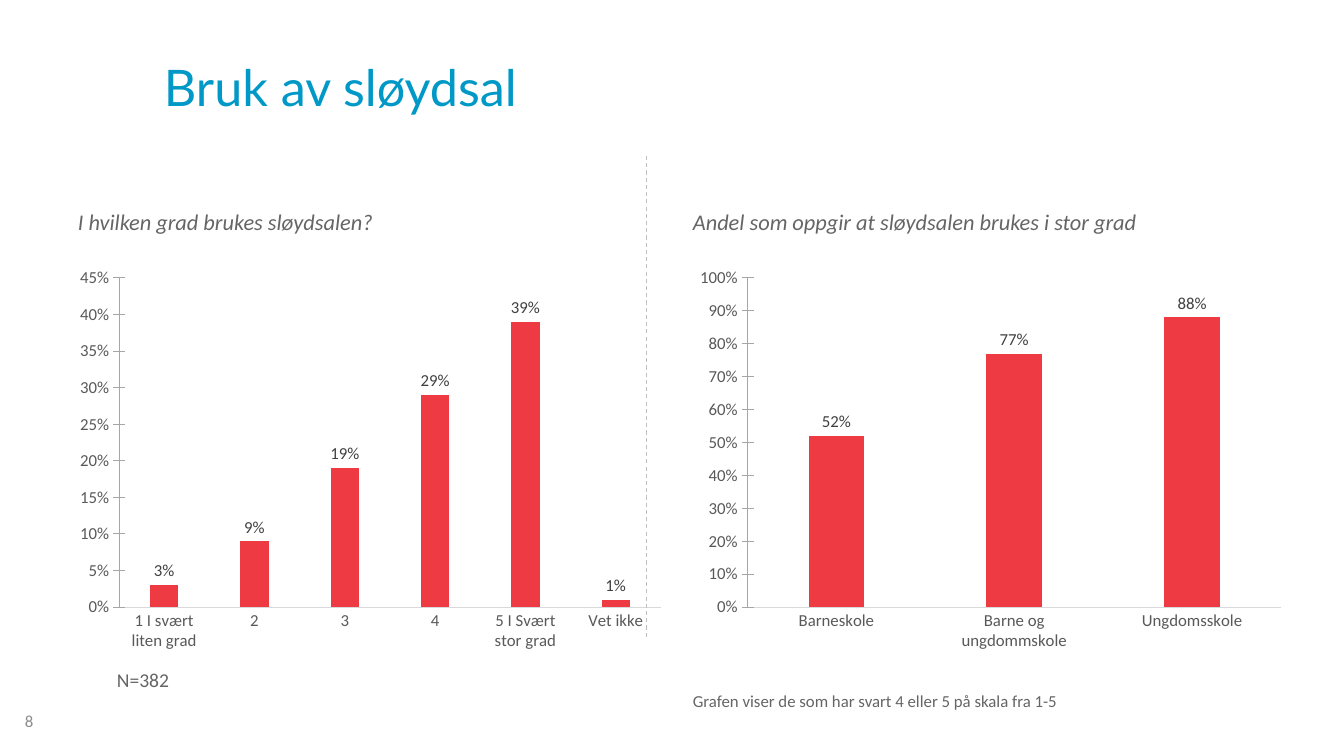
from lxml import etree
from pptx import Presentation
from pptx.chart.data import CategoryChartData as Data
from pptx.dml.color import RGBColor as RGB
from pptx.enum.chart import XL_CHART_TYPE as Kind, XL_LABEL_POSITION as Spot
from pptx.enum.chart import XL_TICK_MARK as Tick
from pptx.enum.dml import MSO_LINE as Dash
from pptx.enum.shapes import MSO_CONNECTOR as Link
from pptx.enum.text import MSO_ANCHOR as Anchor
from pptx.oxml.ns import qn
from pptx.util import Emu, Pt

HEX = {
    "title": "0098C6", "text": "656567", "page": "8C8C8C", "bar": "EE3A43",
    "label": "404040", "tick": "595959", "base": "D9D9D9", "axis": "A6A6A6",
    "split": "BFBFBF",
}
SCALE = 914400 / 100.8


def px(num):
    return Emu(round(num * SCALE))


def tint(name):
    return RGB.from_string(HEX[name])


def style(font, size, color, face="Calibri"):
    font.name = face
    font.size = Pt(size)
    font.color.rgb = tint(color)


def stroke(line, color):
    line.color.rgb = tint(color)
    line.width = Pt(0.75)


def add_text(slide, box, words, size, color="text", face="Calibri",
             anchor=Anchor.MIDDLE, slant=False):
    frame = slide.shapes.add_textbox(*map(px, box)).text_frame
    frame.word_wrap = True
    frame.vertical_anchor = anchor
    run = frame.paragraphs[0].add_run()
    run.text = words
    style(run.font, size, color, face)
    run.font.italic = slant


def add_split(slide, left, top, end):
    line = slide.shapes.add_connector(Link.STRAIGHT, *map(px, (left, top, left, end)))
    stroke(line.line, "split")
    line.line.dash_style = Dash.DASH
    etree.SubElement(line._element.spPr, qn("a:effectLst"))


def add_bars(slide, box, shares, top, step):
    data = Data(number_format="0%")
    data.categories = list(shares)
    data.add_series("Series 1", list(shares.values()))
    chart = slide.shapes.add_chart(Kind.COLUMN_CLUSTERED, *map(px, box), data).chart
    chart.has_legend = False
    chart.has_title = False
    chart.font.name = "Calibri"
    chart.font.size = Pt(10)

    # Bars and their labels
    plot = chart.plots[0]
    plot.gap_width = 219
    plot.overlap = -27
    plot.vary_by_categories = False
    fill = plot.series[0].format.fill
    fill.solid()
    fill.fore_color.rgb = tint("bar")
    plot.has_data_labels = True
    labels = plot.data_labels
    labels.show_value = True
    labels.position = Spot.OUTSIDE_END
    labels.number_format = "0%"
    labels.number_format_is_linked = False
    style(labels.font, 12, "label")

    # Axes
    for axis, mark, color in ((chart.category_axis, Tick.NONE, "base"),
                              (chart.value_axis, Tick.CROSS, "axis")):
        axis.has_major_gridlines = False
        axis.major_tick_mark = mark
        axis.minor_tick_mark = Tick.NONE
        style(axis.tick_labels.font, 12, "tick")
        stroke(axis.format.line, color)
    scale = chart.value_axis
    scale.minimum_scale = 0
    scale.maximum_scale = top
    scale.major_unit = step
    scale.tick_labels.number_format = "0%"
    scale.tick_labels.number_format_is_linked = False


def main():
    deck = Presentation()
    deck.slide_width, deck.slide_height = px(1344), px(756)
    slide = deck.slides.add_slide(deck.slide_layouts[6])

    # Title and page number
    add_text(slide, (154, 23, 1139, 126), "Bruk av sløydsal", 36, "title", "Lato")
    add_text(slide, (15, 701, 313, 40), "8", 12, "page")

    # Left half: degree of use
    add_text(slide, (68, 169, 594, 71), "I hvilken grad brukes sløydsalen?", 16,
             anchor=Anchor.BOTTOM, slant=True)
    use = {"1 I svært liten grad": 0.03, "2": 0.09, "3": 0.19, "4": 0.29,
           "5 I Svært stor grad": 0.39, "Vet ikke": 0.01}
    add_bars(slide, (68, 260, 605, 399), use, 0.45, 0.05)
    add_text(slide, (107, 660, 95, 40), "N=382", 14)

    # Dashed divider
    add_split(slide, 647, 156, 637)

    # Right half: share by type of school
    add_text(slide, (683, 169, 594, 71),
             "Andel som oppgir at sløydsalen brukes i stor grad", 16,
             anchor=Anchor.BOTTOM, slant=True)
    schools = {"Barneskole": 0.52, "Barne og ungdommskole": 0.77,
               "Ungdomsskole": 0.88}
    add_bars(slide, (688, 260, 605, 399), schools, 1, 0.1)
    add_text(slide, (683, 645, 594, 71),
             "Grafen viser de som har svart 4 eller 5 på skala fra 1-5", 12,
             anchor=Anchor.BOTTOM)

    deck.save("out.pptx")


if __name__ == "__main__":
    main()
